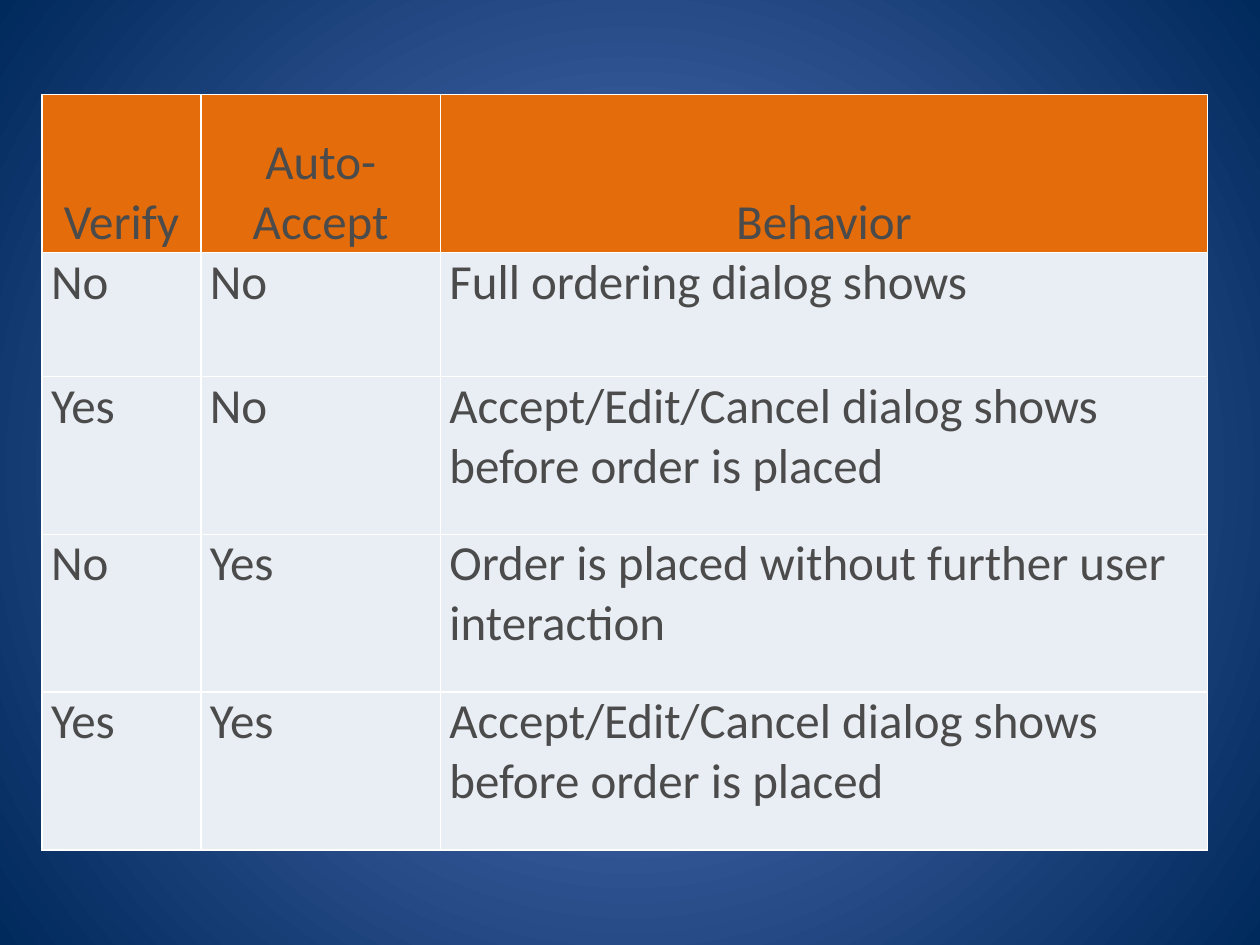
"""Builds a slide with a table of order verification settings and behavior."""
from dataclasses import dataclass

from lxml import etree
from pptx import Presentation
from pptx import util as u
from pptx.dml.color import RGBColor
from pptx.enum import text
from pptx.oxml import parse_xml
from pptx.oxml.ns import nsdecls, qn

HEADINGS = ("Verify", "Auto-Accept", "Behavior")
CASES = [
    ("No", "No", "Full ordering dialog shows"),
    ("Yes", "No", "Accept/Edit/Cancel dialog shows before order is placed"),
    ("No", "Yes", "Order is placed without further user interaction"),
    ("Yes", "Yes", "Accept/Edit/Cancel dialog shows before order is placed"),
]
COLUMN_WIDTHS = (3.2, 4.83, 15.46)
TALL_ROW, SHORT_ROW = 3.18, 2.5
TABLE_LEFT, TABLE_TOP = 0.85, 1.91


@dataclass(frozen=True)
class Theme:
    font: str = "Calibri"
    size: int = 28
    ink: str = "4B4B4B"
    heading_fill: str = "E46C0A"
    case_fill: str = "E9EDF4"
    border: str = "FFFFFF"
    glow: str = "5E7CC5"
    edge: str = "00295C"


THEME = Theme()


def paint_background(slide):
    fill = slide.background.fill
    fill.gradient()
    for stop, color in zip(fill.gradient_stops, (THEME.glow, THEME.edge)):
        stop.color.rgb = RGBColor.from_string(color)
    gradient = slide.element.xpath(".//a:gradFill")[0]
    gradient.remove(gradient.find(qn("a:lin")))
    circle = etree.SubElement(gradient, qn("a:path"), path="circle")
    etree.SubElement(circle, qn("a:fillToRect"), l="50000", t="50000", r="50000", b="50000")


def add_borders(cell):
    properties = cell._tc.get_or_add_tcPr()
    for position, side in enumerate(("lnL", "lnR", "lnT", "lnB")):
        properties.insert(position, parse_xml(
            f'<a:{side} {nsdecls("a")} w="{u.Pt(1)}"><a:solidFill>'
            f'<a:srgbClr val="{THEME.border}"/></a:solidFill></a:{side}>'))


def write_cell(cell, words, *, fill, align, anchor):
    cell.fill.solid()
    cell.fill.fore_color.rgb = RGBColor.from_string(fill)
    cell.margin_left = cell.margin_right = u.Cm(0.18)
    cell.margin_top = cell.margin_bottom = u.Cm(0)
    cell.vertical_anchor = anchor
    paragraph = cell.text_frame.paragraphs[0]
    paragraph.alignment = align
    paragraph.space_after = u.Pt(6)
    run = paragraph.add_run()
    run.text = words
    run.font.name = THEME.font
    run.font.size = u.Pt(THEME.size)
    run.font.bold = False
    run.font.color.rgb = RGBColor.from_string(THEME.ink)
    add_borders(cell)


def add_behavior_table(slide):
    rows = [HEADINGS, *CASES]
    heights = [SHORT_ROW if index == 1 else TALL_ROW for index in range(len(rows))]
    behavior = slide.shapes.add_table(
        len(rows), len(HEADINGS), u.Cm(TABLE_LEFT), u.Cm(TABLE_TOP),
        u.Cm(sum(COLUMN_WIDTHS)), u.Cm(sum(heights))).table
    behavior.horz_banding = False
    for column, width in zip(behavior.columns, COLUMN_WIDTHS):
        column.width = u.Cm(width)
    heading_style = dict(fill=THEME.heading_fill, align=text.PP_ALIGN.CENTER,
                         anchor=text.MSO_ANCHOR.BOTTOM)
    case_style = dict(fill=THEME.case_fill, align=text.PP_ALIGN.LEFT,
                      anchor=text.MSO_ANCHOR.TOP)
    for index, (row, height, entries) in enumerate(zip(behavior.rows, heights, rows)):
        row.height = u.Cm(height)
        for cell, words in zip(row.cells, entries):
            write_cell(cell, words, **(case_style if index else heading_style))


def main():
    deck = Presentation()
    deck.slide_width, deck.slide_height = u.Cm(25.4), u.Cm(19.05)
    slide = deck.slides.add_slide(deck.slide_layouts[6])
    paint_background(slide)
    add_behavior_table(slide)
    deck.save("out.pptx")


if __name__ == "__main__":
    main()
